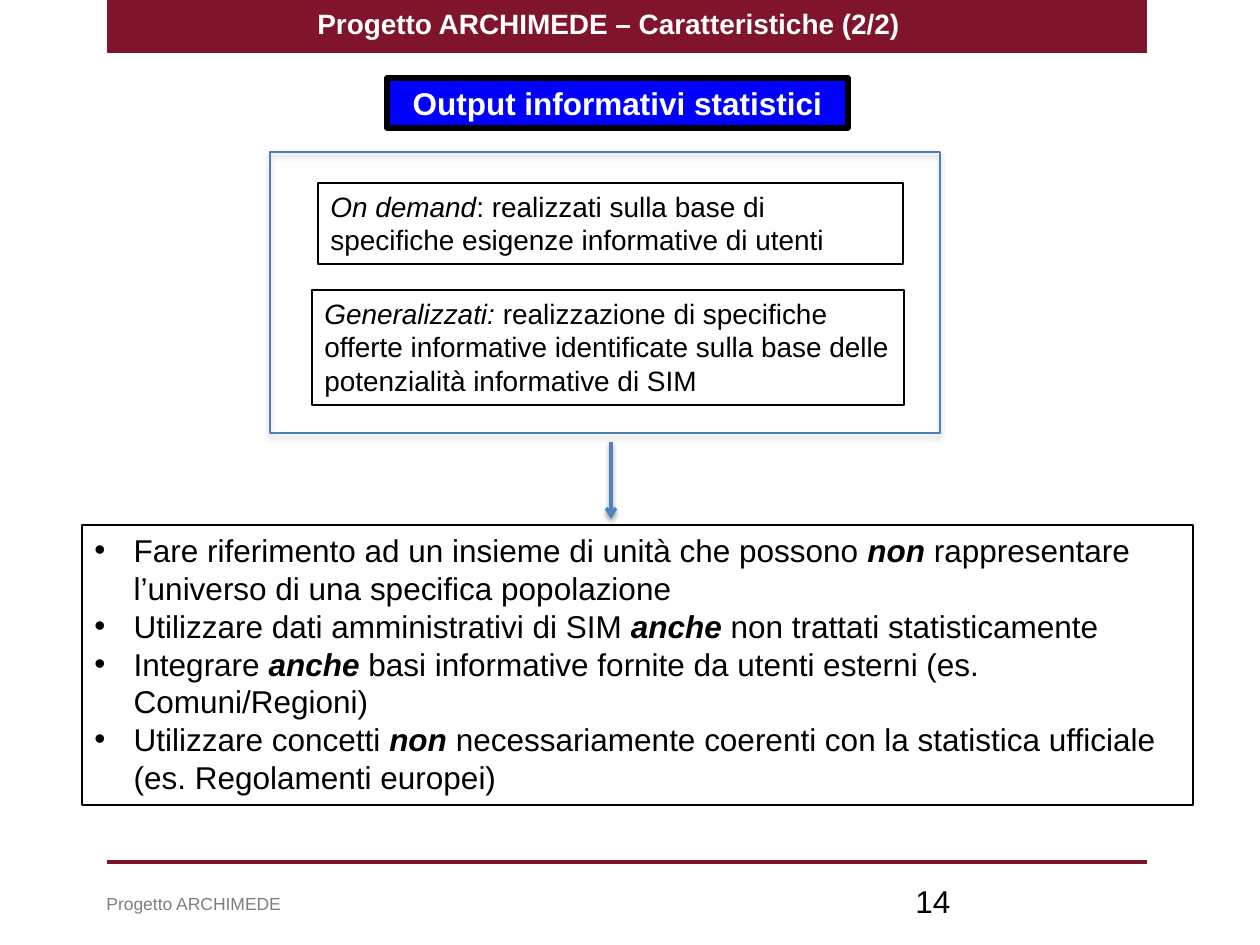
from pptx import Presentation, util as u
from pptx.dml.color import RGBColor
from pptx.enum import shapes, text
from pptx.oxml import parse_xml
from pptx.oxml.ns import nsdecls

PX = 914400 / 126
RED, BLUE, BLACK, WHITE = "7F142A", "4F81BD", "000000", "FFFFFF"

# Content: a run is (words, style), style being "", "i" or "bi"
TITLE = "Progetto ARCHIMEDE – Caratteristiche (2/2)"
HEAD = "Output informativi statistici"
KINDS = [
    ((318, 183, 585, 81), [
        ("On demand", "i"),
        (": realizzati sulla base di specifiche esigenze informative di utenti", "")]),
    ((312, 290, 592, 115), [
        ("Generalizzati: ", "i"),
        ("realizzazione di specifiche offerte informative identificate "
         "sulla base delle potenzialità informative di SIM", "")]),
]
POINTS = [
    [("Fare riferimento ad un insieme di unità che possono ", ""), ("non", "bi"),
     (" rappresentare l’universo di una specifica popolazione", "")],
    [("Utilizzare dati amministrativi di SIM ", ""), ("anche", "bi"),
     (" non trattati statisticamente", "")],
    [("Integrare ", ""), ("anche", "bi"),
     (" basi informative fornite da utenti esterni (es. Comuni/Regioni)", "")],
    [("Utilizzare concetti ", ""), ("non ", "bi"),
     ("necessariamente coerenti con la statistica ufficiale "
      "(es. Regolamenti europei)", "")],
]
FOOT, PAGE = "Progetto ARCHIMEDE", "14"

prs = Presentation()
prs.slide_width, prs.slide_height = u.Inches(10), u.Inches(7.5)
slide = prs.slides.add_slide(prs.slide_layouts[6])


def px(*vals):
    return [round(v * PX) for v in vals]


def color(code):
    return RGBColor.from_string(code)


def rect(at, fill=None, line=None, width=0.75):
    box = slide.shapes.add_shape(shapes.MSO_SHAPE.RECTANGLE, *px(*at))
    box.shadow.inherit = False
    if fill:
        box.fill.solid()
        box.fill.fore_color.rgb = color(fill)
    else:
        box.fill.background()
    if line:
        box.line.color.rgb = color(line)
        box.line.width = u.Pt(width)
    else:
        box.line.fill.background()
    return box


def label(at):
    return slide.shapes.add_textbox(*px(*at))


def write(box, paras, size, ink=BLACK, bold=None, wrap=True, grow=True,
          align=text.PP_ALIGN.LEFT, bullet=False):
    frame = box.text_frame
    frame.word_wrap = wrap
    frame.vertical_anchor = text.MSO_ANCHOR.TOP
    if grow:
        frame.auto_size = text.MSO_AUTO_SIZE.SHAPE_TO_FIT_TEXT
    for i, runs in enumerate(paras):
        para = frame.add_paragraph() if i else frame.paragraphs[0]
        para.alignment = align
        if bullet:
            props = para._p.get_or_add_pPr()
            props.set("marL", "285750")
            props.set("indent", "-285750")
            props.append(parse_xml(f'<a:buFont {nsdecls("a")} typeface="Arial"/>'))
            props.append(parse_xml(f'<a:buChar {nsdecls("a")} char="•"/>'))
        font = para.font
        font.name, font.size, font.bold = "Arial", u.Pt(size), bold
        font.color.rgb = color(ink)
        for words, style in runs:
            run = para.add_run()
            run.text = words
            if "b" in style:
                run.font.bold = True
            if "i" in style:
                run.font.italic = True


def shade(part, alpha=None, dist=0):
    """Set a soft shadow straight below, or none."""
    props = part._element.spPr
    for old in props.findall("{*}effectLst"):
        props.remove(old)
    drop = "" if alpha is None else (
        f'<a:outerShdw blurRad="{u.Pt(3.1)}" dist="{u.Pt(dist)}" dir="5400000" '
        f'rotWithShape="0"><a:srgbClr val="{BLACK}"><a:alpha val="{alpha * 1000}"/>'
        '</a:srgbClr></a:outerShdw>')
    props.append(parse_xml(f'<a:effectLst {nsdecls("a")}>{drop}</a:effectLst>'))


def rule(ends, ink):
    line = slide.shapes.add_connector(shapes.MSO_CONNECTOR.STRAIGHT, *px(*ends))
    line.line.color.rgb = color(ink)
    line.line.width = u.Pt(2)
    return line


# Top bar and bottom rule
rect((107, 0, 1040, 53), RED)
shade(rule((107, 862, 1147, 862), RED))

# Heading and the two kinds of output in their frame
write(rect((387, 78, 461, 50), "0000FF", BLACK, 3), [[(HEAD, "")]], 18, WHITE,
      bold=True, align=text.PP_ALIGN.CENTER)
for at, runs in KINDS:
    write(rect(at, line=BLACK), [runs], 16)
shade(rect((270, 152, 670, 281), line="4B7EBC"), 35, 1.8)

# Arrow down to the list
arrow = rule((611, 442, 611, 519), BLUE)
arrow.line._get_or_add_ln().append(
    parse_xml(f'<a:tailEnd {nsdecls("a")} type="arrow"/>'))
shade(arrow, 38, 1.6)
write(rect((82, 525, 1111, 280), line=BLACK), POINTS, 18, bullet=True)

# Title, footer and page number
write(label((305, 0, 615, 47)), [[(TITLE, "")]], 16, WHITE, bold=True, wrap=False)
write(label((94, 887, 646, 34)), [[(FOOT, "")]], 10, "7F7F7F")
write(label((903, 876, 294, 50)), [[(PAGE, "")]], 18, grow=False)

prs.save("out.pptx")
